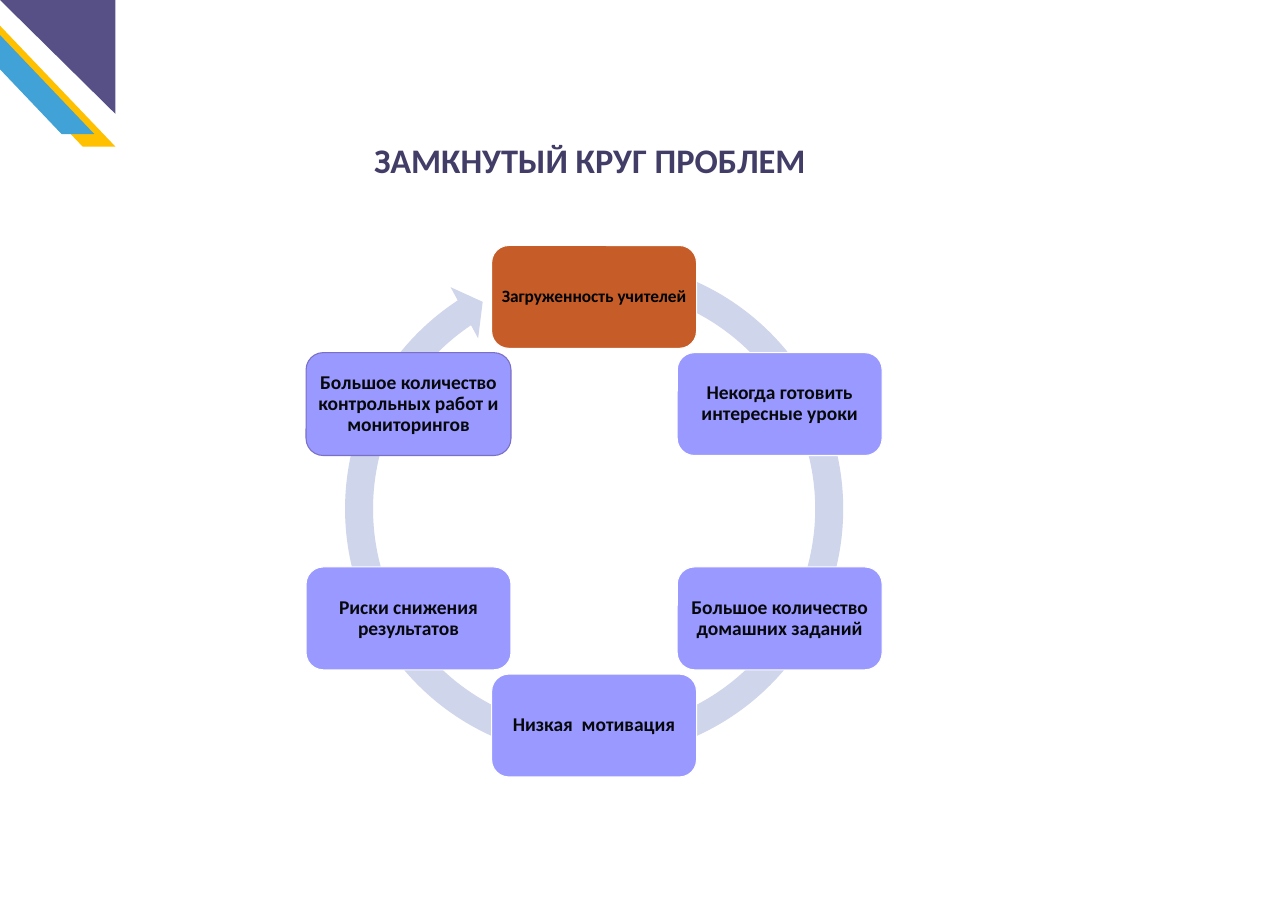
from dataclasses import dataclass
from math import cos, radians, sin

from pptx import Presentation
from pptx.dml.color import RGBColor
from pptx.enum.shapes import MSO_SHAPE
from pptx.enum.text import MSO_ANCHOR, PP_ALIGN
from pptx.util import Pt

PX = 9144
PAGE_WIDTH, PAGE_HEIGHT = 1653, 1169


@dataclass(frozen=True)
class Theme:
    """Colours and type sizes of the slide."""
    font: str = "Calibri"
    title: str = "423D67"
    purple: str = "565087"
    blue: str = "41A2D8"
    yellow: str = "FFC000"
    ring: str = "CFD5EA"
    cause: str = "C65D28"
    step: str = "9999FF"
    edge: str = "FFFFFF"
    last_edge: str = "7A70C6"
    cause_text: str = "000000"
    step_text: str = "07080B"
    title_size: float = 31.8
    cause_size: int = 16
    step_size: int = 18


THEME = Theme()
TITLE = "ЗАМКНУТЫЙ КРУГ ПРОБЛЕМ"
PROBLEMS = [
    "Загруженность учителей",
    "Некогда готовить интересные уроки",
    "Большое количество домашних заданий",
    "Низкая  мотивация",
    "Риски снижения результатов",
    "Большое количество контрольных работ и мониторингов",
]


def paint(shape, fill, edge=None):
    """Fill a shape, outline it if an edge colour is given, and drop its shadow."""
    shape.shadow.inherit = False
    shape.fill.solid()
    shape.fill.fore_color.rgb = RGBColor.from_string(fill)
    if edge:
        shape.line.color.rgb = RGBColor.from_string(edge)
        shape.line.width = Pt(1)
    else:
        shape.line.fill.background()


def add_preset(page, kind, box, fill, edge=None):
    """Add a painted preset shape in a box given in px."""
    shape = page.shapes.add_shape(kind, *(round(length * PX) for length in box))
    paint(shape, fill, edge)
    return shape


def set_text(shape, text, size, color, align, anchor, insets):
    """Write one bold paragraph with the given insets in px."""
    frame = shape.text_frame
    frame.text = text
    frame.word_wrap = True
    frame.vertical_anchor = anchor
    (frame.margin_left, frame.margin_top,
     frame.margin_right, frame.margin_bottom) = (inset * PX for inset in insets)
    para = frame.paragraphs[0]
    para.alignment = align
    font = para.runs[0].font
    font.name, font.size, font.bold = THEME.font, Pt(size), True
    font.color.rgb = RGBColor.from_string(color)
    return para


def add_corner(page, box):
    """Draw the two slanted stripes and the triangle of the corner."""
    left, top, width, height = box
    stripes = [
        (THEME.yellow, [(0, 33), (148, 188), (106, 188), (0, 77)]),
        (THEME.blue, [(0, 45), (121, 172), (79, 172), (0, 89)]),
    ]
    for color, points in stripes:
        start, *others = [(left + x, top + y) for x, y in points]
        builder = page.shapes.build_freeform(*start, scale=PX)
        builder.add_line_segments(others, close=True)
        paint(builder.convert_to_shape(), color)
    triangle = add_preset(page, MSO_SHAPE.RIGHT_TRIANGLE,
                          (left, top, width, height), THEME.purple)
    triangle.rotation = 180


def add_title(page, box):
    """Place and format the title placeholder."""
    title = page.shapes.title
    title.left, title.top, title.width, title.height = (length * PX for length in box)
    set_text(title, TITLE, THEME.title_size, THEME.title,
             PP_ALIGN.LEFT, MSO_ANCHOR.TOP, (0, 5, 10, 5))


def add_cycle(page, box):
    """Set the problems evenly around a circular arrow."""
    left, top, width, height = box
    card_width, card_height, ring_size = 263, 132, 678
    center_x, center_y = left + width / 2, top + height / 2
    radius = (height - card_height) / 2
    ring = add_preset(page, MSO_SHAPE.CIRCULAR_ARROW,
                      (center_x - ring_size / 2, top - 1, ring_size, ring_size),
                      THEME.ring)
    for index, value in enumerate((0.053, 3.126, 141.901, 171.493, 0.055)):
        ring.adjustments[index] = value

    last = len(PROBLEMS) - 1
    for index, problem in enumerate(PROBLEMS):
        angle = radians(360 / len(PROBLEMS) * index)
        card_box = (center_x + radius * sin(angle) - card_width / 2,
                    center_y - radius * cos(angle) - card_height / 2,
                    card_width, card_height)
        fill, color, size = (
            (THEME.cause, THEME.cause_text, THEME.cause_size) if index == 0
            else (THEME.step, THEME.step_text, THEME.step_size))
        edge = THEME.last_edge if index == last else THEME.edge
        card = add_preset(page, MSO_SHAPE.ROUNDED_RECTANGLE, card_box, fill, edge)
        para = set_text(card, problem, size, color,
                        PP_ALIGN.CENTER, MSO_ANCHOR.MIDDLE, (5, 7, 5, 7))
        para.line_spacing = 0.9


def main():
    """Build the slide and save the deck."""
    deck = Presentation()
    deck.slide_width, deck.slide_height = PAGE_WIDTH * PX, PAGE_HEIGHT * PX
    page = deck.slides.add_slide(deck.slide_layouts[5])
    add_corner(page, (0, 0, 148, 146))
    add_cycle(page, (393, 315, 739, 682))
    add_title(page, (480, 173, 764, 64))
    deck.save("out.pptx")


if __name__ == "__main__":
    main()
